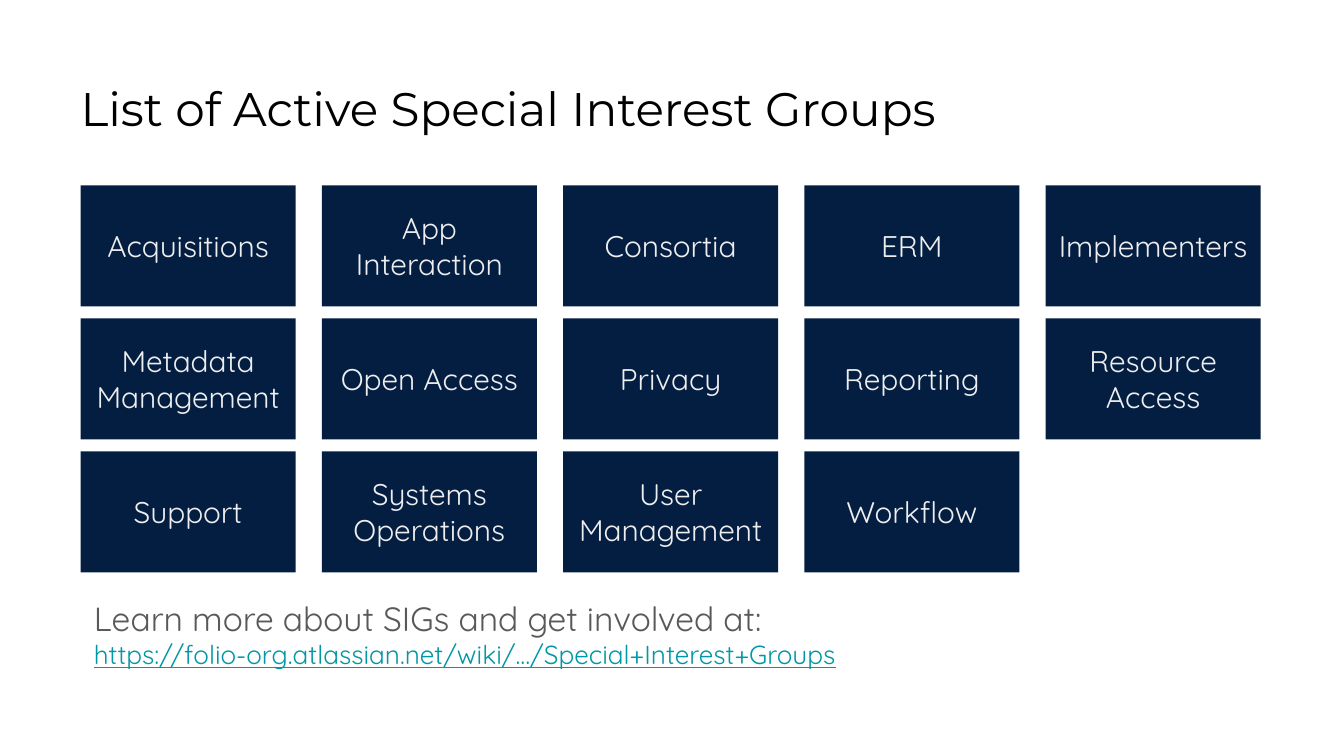
from dataclasses import dataclass

from pptx import Presentation
from pptx.dml.color import RGBColor
from pptx.enum.shapes import MSO_SHAPE
from pptx.enum.text import MSO_ANCHOR, MSO_AUTO_SIZE, PP_ALIGN
from pptx.util import Inches, Pt


@dataclass(frozen=True)
class Theme:
    title_font: str = "Montserrat"
    body_font: str = "Quicksand"
    title_color: str = "000000"
    tile_fill: str = "041E42"
    tile_color: str = "EEEEEE"
    note_color: str = "595959"
    link_color: str = "0097A7"
    title_size: float = 25.2
    tile_size: float = 16
    note_size: float = 18
    link_size: float = 14


THEME = Theme()

GROUPS = [
    "Acquisitions", "App Interaction", "Consortia", "ERM", "Implementers",
    "Metadata Management", "Open Access", "Privacy", "Reporting", "Resource Access",
    "Support", "Systems Operations", "User Management", "Workflow",
]
SLIDE_WIDTH = 10
SLIDE_HEIGHT = SLIDE_WIDTH * 9 / 16
COLUMNS = 5
GRID_LEFT, GRID_RIGHT, GRID_TOP = 0.6, 9.38, 1.38
TILE_WIDTH, TILE_HEIGHT = 1.6, 0.9
COLUMN_STEP = (GRID_RIGHT - GRID_LEFT - TILE_WIDTH) / (COLUMNS - 1)
ROW_STEP = 0.99


def style_paragraph(paragraph, font_name, size, color, align=PP_ALIGN.LEFT):
    paragraph.alignment = align
    paragraph.font.name = font_name
    paragraph.font.size = Pt(size)
    paragraph.font.color.rgb = RGBColor.from_string(color)


def set_frame(frame, anchor, vertical_inset):
    frame.word_wrap = True
    frame.auto_size = MSO_AUTO_SIZE.NONE
    frame.vertical_anchor = anchor
    frame.margin_left = frame.margin_right = Inches(0.1)
    frame.margin_top = frame.margin_bottom = Inches(vertical_inset)


def add_title(slide, text):
    title = slide.shapes.title
    title.left, title.top = Inches(0.5), Inches(0.49)
    title.width, title.height = Inches(9), Inches(0.63)
    set_frame(title.text_frame, MSO_ANCHOR.TOP, 0.1)
    title.text_frame.text = text
    style_paragraph(title.text_frame.paragraphs[0], THEME.title_font,
                    THEME.title_size, THEME.title_color)


def add_tile(slide, index, name):
    row, column = divmod(index, COLUMNS)
    tile = slide.shapes.add_shape(
        MSO_SHAPE.RECTANGLE,
        Inches(GRID_LEFT + column * COLUMN_STEP), Inches(GRID_TOP + row * ROW_STEP),
        Inches(TILE_WIDTH), Inches(TILE_HEIGHT),
    )
    tile.shadow.inherit = False
    tile.fill.solid()
    tile.fill.fore_color.rgb = RGBColor.from_string(THEME.tile_fill)
    tile.line.fill.background()
    set_frame(tile.text_frame, MSO_ANCHOR.MIDDLE, 0)
    tile.text_frame.text = name
    style_paragraph(tile.text_frame.paragraphs[0], THEME.body_font,
                    THEME.tile_size, THEME.tile_color, PP_ALIGN.CENTER)


def add_contact(slide, note, address):
    box = slide.shapes.add_textbox(Inches(0.6), Inches(4.35), Inches(5.82), Inches(0.72))
    frame = box.text_frame
    set_frame(frame, MSO_ANCHOR.TOP, 0.1)
    frame.text = note
    style_paragraph(frame.paragraphs[0], THEME.body_font, THEME.note_size, THEME.note_color)
    link = frame.add_paragraph()
    link.text = address
    style_paragraph(link, THEME.body_font, THEME.link_size, THEME.link_color)
    link.font.underline = True


def main():
    presentation = Presentation()
    presentation.slide_width = Inches(SLIDE_WIDTH)
    presentation.slide_height = Inches(SLIDE_HEIGHT)
    slide = presentation.slides.add_slide(presentation.slide_layouts.get_by_name("Title Only"))
    add_title(slide, "List of Active Special Interest Groups")
    for index, name in enumerate(GROUPS):
        add_tile(slide, index, name)
    add_contact(slide, "Learn more about SIGs and get involved at:",
                "https://folio-org.atlassian.net/wiki/…/Special+Interest+Groups")
    presentation.save("out.pptx")


if __name__ == "__main__":
    main()
